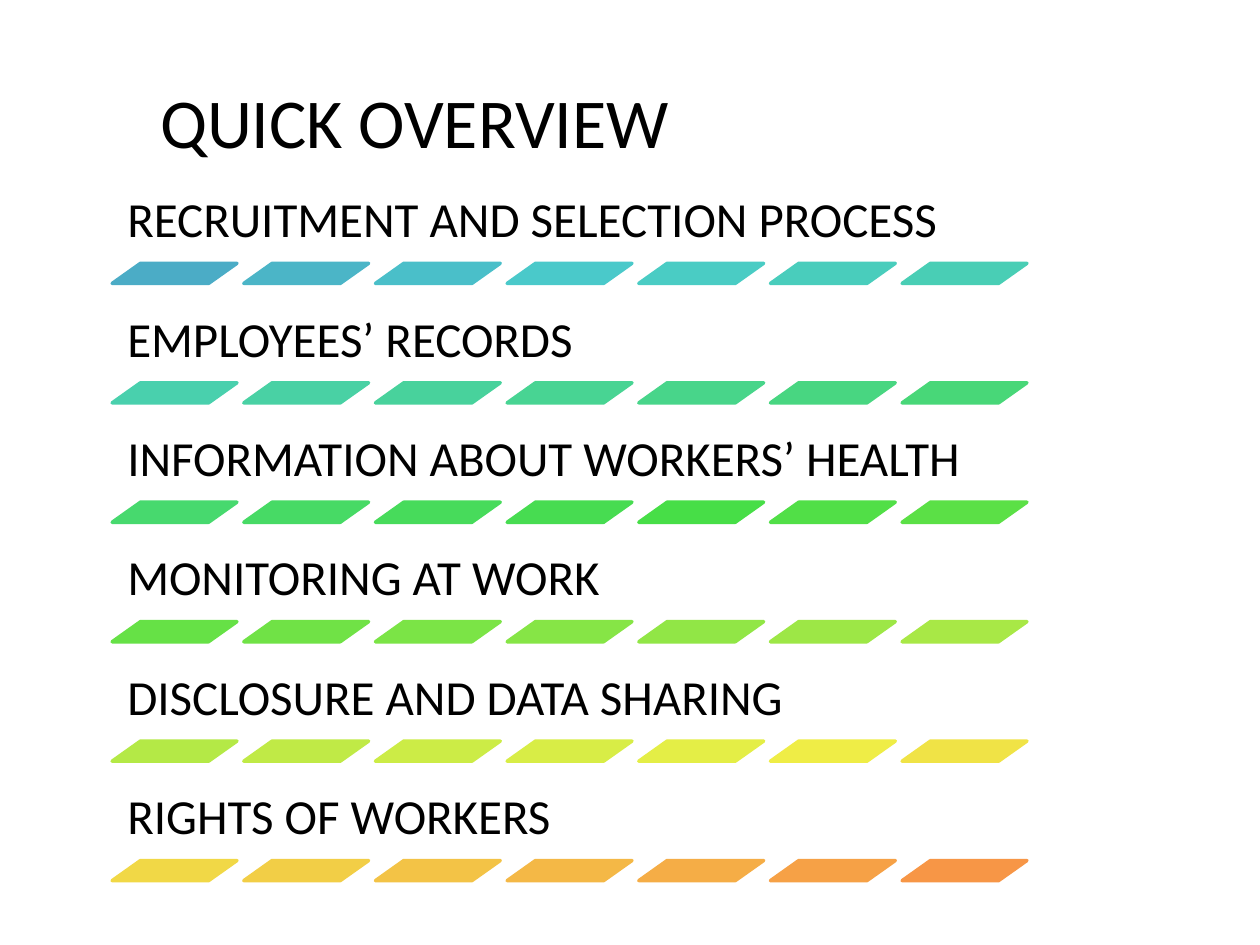
"""Build the quick overview slide: six headings, each underlined by a run of slanted bars."""
from colorsys import hls_to_rgb, rgb_to_hls

from pptx import Presentation
from pptx.dml.color import RGBColor
from pptx.enum.shapes import MSO_SHAPE
from pptx.enum.text import MSO_ANCHOR, PP_ALIGN
from pptx.util import Inches, Pt

COLORS = {"text": "000000", "first_bar": "4BACC6", "last_bar": "F79646"}
TOPICS = [
    "RECRUITMENT AND SELECTION PROCESS",
    "EMPLOYEES’ RECORDS",
    "INFORMATION ABOUT WORKERS’ HEALTH",
    "MONITORING AT WORK",
    "DISCLOSURE AND DATA SHARING",
    "RIGHTS OF WORKERS",
]
BARS_PER_TOPIC = 7
LEFT = 0.89
ROW_STEP = (6.16 - 1.42) / (len(TOPICS) - 1)
BAR_STEP = (7.16 - LEFT) / (BARS_PER_TOPIC - 1)


def write(frame, text, size, anchor, inset=None, line_spacing=None):
    frame.word_wrap = True
    frame.vertical_anchor = anchor
    if inset is not None:
        frame.margin_left = frame.margin_right = Inches(inset)
        frame.margin_top = frame.margin_bottom = Inches(inset)
    paragraph = frame.paragraphs[0]
    paragraph.alignment = PP_ALIGN.LEFT
    if line_spacing is not None:
        paragraph.line_spacing = line_spacing
    run = paragraph.add_run()
    run.text = text
    run.font.name = "Calibri"
    run.font.size = Pt(size)
    run.font.color.rgb = RGBColor.from_string(COLORS["text"])


def bar_color(share):
    first, last = (
        rgb_to_hls(*(channel / 255 for channel in RGBColor.from_string(COLORS[name])))
        for name in ("first_bar", "last_bar")
    )
    blend = (start + (end - start) * share for start, end in zip(first, last))
    return RGBColor(*(round(channel * 255) for channel in hls_to_rgb(*blend)))


presentation = Presentation()
presentation.slide_width = Inches(10)
presentation.slide_height = Inches(7.5)
slide = presentation.slides.add_slide(presentation.slide_layouts[5])

title = slide.shapes.title
title.left, title.top = Inches(1.17), Inches(0.33)
title.width, title.height = Inches(8.83), Inches(1.25)
write(title.text_frame, "QUICK OVERVIEW", size=40, anchor=MSO_ANCHOR.MIDDLE)

overview = slide.shapes.add_group_shape().shapes
last_bar = len(TOPICS) * BARS_PER_TOPIC - 1
for row, topic in enumerate(TOPICS):
    top = 1.42 + row * ROW_STEP
    heading = overview.add_textbox(Inches(LEFT), Inches(top), Inches(7.41), Inches(0.67))
    write(heading.text_frame, topic, size=28, anchor=MSO_ANCHOR.BOTTOM, inset=0.12, line_spacing=0.9)
    for column in range(BARS_PER_TOPIC):
        bar = overview.add_shape(
            MSO_SHAPE.PARALLELOGRAM,
            Inches(LEFT + column * BAR_STEP), Inches(top + 0.67), Inches(0.99), Inches(0.16),
        )
        color = bar_color((row * BARS_PER_TOPIC + column) / last_bar)
        bar.adjustments[0] = 1.41
        bar.shadow.inherit = False
        bar.fill.solid()
        bar.fill.fore_color.rgb = color
        bar.line.color.rgb = color
        bar.line.width = Pt(2)

presentation.save("out.pptx")
